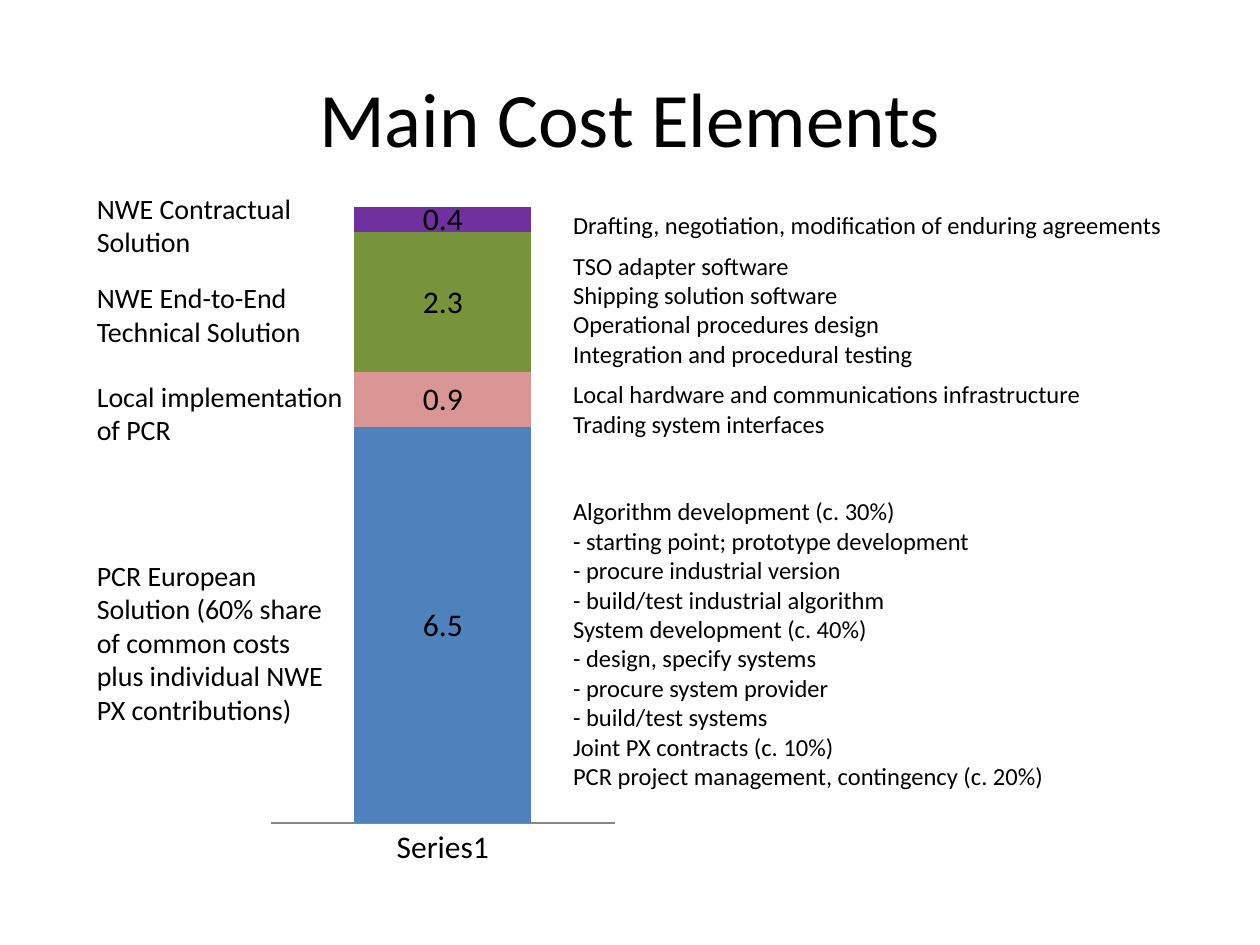
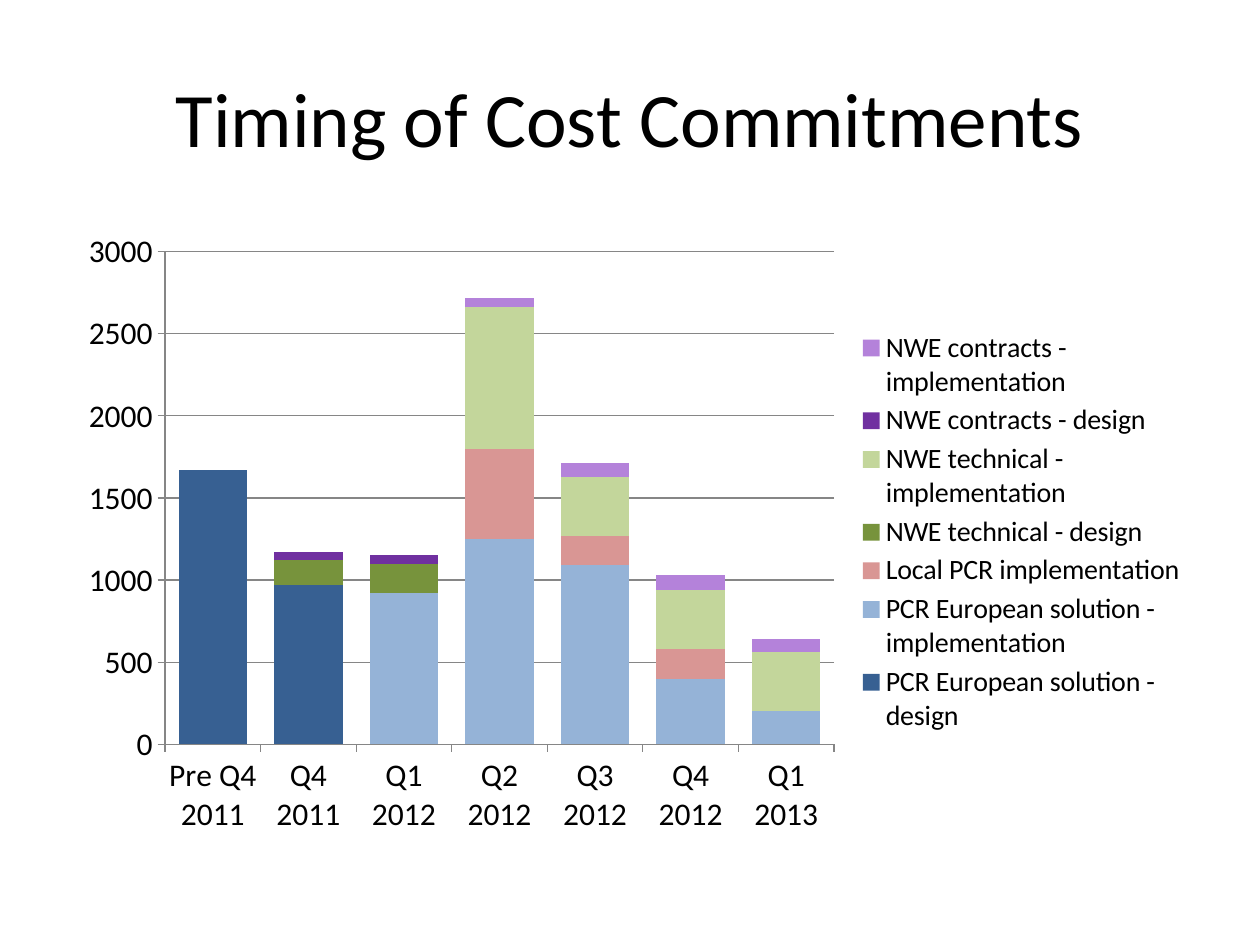
from lxml.etree import SubElement
from pptx import Presentation
from pptx.chart.data import CategoryChartData
from pptx.dml.color import RGBColor
from pptx.enum.chart import XL_CHART_TYPE as ChartType, XL_LABEL_POSITION as LabelPos
from pptx.enum.chart import XL_LEGEND_POSITION as LegendPos, XL_TICK_MARK as Tick
from pptx.enum.text import MSO_ANCHOR as Anchor, MSO_AUTO_SIZE as AutoSize, PP_ALIGN as Align
from pptx.oxml.ns import qn
from pptx.util import Inches, Pt

BLACK = RGBColor(0x00, 0x00, 0x00)
GREY = RGBColor(0x86, 0x86, 0x86)
BLUE = RGBColor(0x4F, 0x81, 0xBD)
DARK_BLUE = RGBColor(0x37, 0x60, 0x92)
LIGHT_BLUE = RGBColor(0x95, 0xB3, 0xD7)
PINK = RGBColor(0xD9, 0x96, 0x94)
GREEN = RGBColor(0x77, 0x93, 0x3C)
LIGHT_GREEN = RGBColor(0xC3, 0xD6, 0x9B)
PURPLE = RGBColor(0x70, 0x30, 0xA0)
LIGHT_PURPLE = RGBColor(0xB4, 0x82, 0xDA)

COST_SERIES = [
    ("Series 1", [6.5], BLUE),
    ("Series 2", [0.9], PINK),
    ("Series 3", [2.3], GREEN),
    ("Series 4", [0.4], PURPLE),
]
COST_NAMES = [
    (4.38, 2.05, 1.45, "PCR European Solution (60% share of common costs plus individual NWE PX contributions)"),
    (2.96, 2.29, 0.64, "Local implementation of PCR"),
    (2.18, 2.05, 0.64, "NWE End-to-End Technical Solution"),
    (1.47, 1.89, 0.64, "NWE Contractual Solution"),
]
COST_DETAILS = [
    (1.62, 4.93, 0.34, ["Drafting, negotiation, modification of enduring agreements"]),
    (1.94, 2.93, 1.04, ["TSO adapter software", "Shipping solution software",
                        "Operational procedures design", "Integration and procedural testing"]),
    (2.96, 4.26, 0.57, ["Local hardware and communications infrastructure", "Trading system interfaces"]),
    (3.89, 3.97, 2.69, ["Algorithm development (c. 30%)", "- starting point; prototype development",
                        "- procure industrial version", "- build/test industrial algorithm",
                        "System development (c. 40%)", "- design, specify systems",
                        "- procure system provider", "- build/test systems",
                        "Joint PX contracts (c. 10%)", "PCR project management, contingency (c. 20%)"]),
]
QUARTERS = ["Pre Q4 2011", "Q4 2011", "Q1 2012", "Q2 2012", "Q3 2012", "Q4 2012", "Q1 2013"]
TIMING_SERIES = [
    ("PCR European solution - design", [1670, 970] + [None] * 5, DARK_BLUE),
    ("PCR European solution - implementation", [None, None, 920, 1250, 1090, 400, 200], LIGHT_BLUE),
    ("Local PCR implementation", [None, None, None, 550, 180, 180, 0], PINK),
    ("NWE technical - design", [None, 150, 180] + [None] * 4, GREEN),
    ("NWE technical - implementation", [None, None, None, 860, 360, 360, 360], LIGHT_GREEN),
    ("NWE contracts - design", [None, 50, 50] + [None] * 4, PURPLE),
    ("NWE contracts - implementation", [None, None, None, 60, 80, 90, 80], LIGHT_PURPLE),
]


class Deck:
    """Holds the shared style and the slide being filled."""

    font_name = "Calibri"

    def __init__(self):
        self.prs = Presentation()
        self.prs.slide_width, self.prs.slide_height = Inches(10), Inches(7.5)
        self.slide = None

    def style(self, font, size):
        font.name, font.size = self.font_name, Pt(size)
        font.color.rgb = BLACK

    def add_slide(self, heading):
        self.slide = self.prs.slides.add_slide(self.prs.slide_layouts[5])
        title = self.slide.shapes.title
        title.left, title.top = Inches(0.5), Inches(0.3)
        title.width, title.height = Inches(9), Inches(1.25)
        self.fill_frame(title.text_frame, [heading], 44, Align.CENTER)
        title.text_frame.vertical_anchor = Anchor.MIDDLE

    def fill_frame(self, frame, lines, size, align=Align.LEFT):
        frame.text = "\n".join(lines)
        for paragraph in frame.paragraphs:
            paragraph.alignment = align
            for run in paragraph.runs:
                self.style(run.font, size)

    def add_text(self, left, top, width, height, lines, size, wrap):
        box = self.slide.shapes.add_textbox(Inches(left), Inches(top), Inches(width), Inches(height))
        frame = box.text_frame
        self.fill_frame(frame, lines, size)
        frame.word_wrap = wrap
        frame.auto_size = AutoSize.SHAPE_TO_FIT_TEXT

    def add_stack(self, left, top, width, height, categories, series, gap, top_value):
        data = CategoryChartData()
        data.categories = categories
        for name, values, _ in series:
            data.add_series(name, values)
        chart = self.slide.shapes.add_chart(
            ChartType.COLUMN_STACKED, Inches(left), Inches(top), Inches(width), Inches(height), data).chart
        self.style(chart.font, 18)
        chart.has_title = chart.has_legend = False
        plot = chart.plots[0]
        plot.gap_width, plot.overlap, plot.vary_by_categories = gap, 100, False
        for bars, (_, _, colour) in zip(plot.series, series):
            bars.invert_if_negative = False
            bars.format.fill.solid()
            bars.format.fill.fore_color.rgb = colour
        chart.value_axis.minimum_scale, chart.value_axis.maximum_scale = 0, top_value
        for axis in (chart.category_axis, chart.value_axis):
            axis.format.line.color.rgb = GREY
        return chart

    def place(self, chart, tag, index, **fractions):
        parent = chart._chartSpace.find(".//" + qn(tag))
        for old in parent.findall(qn("c:layout")):
            parent.remove(old)
        layout = SubElement(parent, qn("c:layout"))
        parent.insert(index, layout)
        manual = SubElement(layout, qn("c:manualLayout"))
        if tag == "c:plotArea":
            SubElement(manual, qn("c:layoutTarget")).set("val", "inner")
        for side in ("xMode", "yMode"):
            SubElement(manual, qn("c:" + side)).set("val", "edge")
        for side, fraction in fractions.items():
            SubElement(manual, qn("c:" + side)).set("val", str(fraction))


def add_cost_elements(deck):
    deck.add_slide("Main Cost Elements")
    chart = deck.add_stack(2.09, 0.6, 2.85, 6.38, ["Series1"], COST_SERIES, 95, 12)
    deck.place(chart, "c:plotArea", 0, x=0.02, y=0.02, w=0.96, h=0.91)
    chart.category_axis.major_tick_mark = Tick.NONE
    chart.value_axis.has_major_gridlines = False
    chart.value_axis.visible = False
    plot = chart.plots[0]
    plot.has_data_labels = True
    plot.data_labels.show_value = True
    plot.data_labels.position = LabelPos.CENTER
    deck.style(plot.data_labels.font, 18)
    for top, width, height, name in COST_NAMES:
        deck.add_text(0.67, top, width, height, [name], 16, True)
    for top, width, height, details in COST_DETAILS:
        deck.add_text(4.45, top, width, height, details, 14, False)


def add_timing(deck):
    deck.add_slide("Timing of Cost Commitments")
    chart = deck.add_stack(0.5, 1.75, 9, 4.95, QUARTERS, TIMING_SERIES, 40, 3000)
    deck.place(chart, "c:plotArea", 0, x=0.09, y=0.05, w=0.59, h=0.79)
    chart.category_axis.major_tick_mark = Tick.OUTSIDE
    amounts = chart.value_axis
    amounts.major_tick_mark = Tick.OUTSIDE
    amounts.major_unit = 500
    amounts.major_gridlines.format.line.color.rgb = GREY
    amounts.tick_labels.number_format = "0"
    amounts.tick_labels.number_format_is_linked = False
    chart.has_legend = True
    chart.legend.position = LegendPos.RIGHT
    chart.legend.include_in_layout = False
    deck.style(chart.legend.font, 16)
    deck.place(chart, "c:legend", 1, x=0.7, y=0.17, w=0.29, h=0.66)


def main():
    deck = Deck()
    add_cost_elements(deck)
    add_timing(deck)
    deck.prs.save("out.pptx")


if __name__ == "__main__":
    main()
